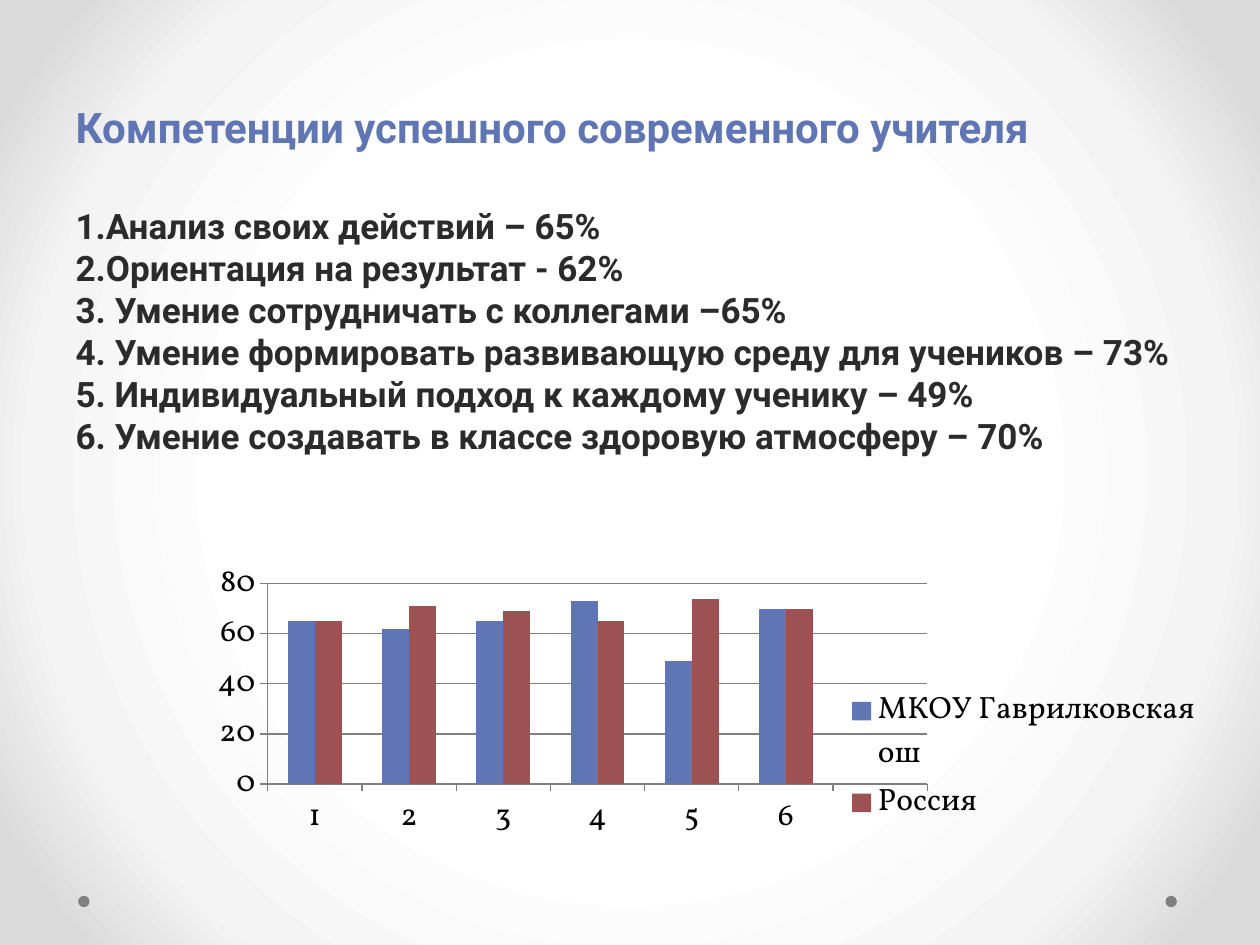
from lxml import etree
from pptx import Presentation
from pptx.chart.data import CategoryChartData
from pptx.dml.color import RGBColor
from pptx.enum import chart as ch, shapes, text
from pptx.oxml import parse_xml
from pptx.oxml.ns import nsdecls, qn
from pptx.util import Inches, Pt

HUES = {"blue": "6076B4", "red": "9C5252", "ink": "2B2B2B",
        "gray": "808080", "black": "000000"}
GLOW = [(50, "FFFFFF"), (76, "F4F4F4"), (92, "DADADA")]
HEAD = "Компетенции успешного современного учителя"
SKILLS = [
    "1.Анализ своих действий – 65%",
    "2.Ориентация на результат - 62%",
    "3. Умение сотрудничать с коллегами –65%",
    "4. Умение формировать развивающую среду для учеников – 73%",
    "5. Индивидуальный подход к каждому ученику – 49%",
    "6. Умение создавать в классе здоровую атмосферу – 70%",
]
CATS = ["1", "2", "3", "4", "5", "6", ""]
SCORES = [
    ("МКОУ Гаврилковская ош", "blue", [65, 62, 65, 73, 49, 70, 0]),
    ("Россия", "red", [65, 71, 69, 65, 74, 70, None]),
]
PLOT = (0.162, 0.039, 0.583, 0.556)
KEY = (0.67, 0.32, 0.32, 0.4)
DOTS = [0.62, 9.25]


def tint(name):
    return RGBColor.from_string(HUES[name])


def write(para, words, size=20, hue="ink", lead=24, after=0):
    para.alignment = text.PP_ALIGN.LEFT
    para.line_spacing = Pt(lead)
    para.space_before = Pt(0)
    para.space_after = Pt(after)
    run = para.add_run()
    run.text = words
    font = run.font
    font.name, font.size, font.bold = "Roboto", Pt(size), True
    font.color.rgb = tint(hue)


def glow(slide):
    stops = "".join(f'<a:gs pos="{p * 1000}"><a:srgbClr val="{c}"/></a:gs>'
                    for p, c in GLOW)
    mid = " ".join(f'{s}="50000"' for s in "ltrb")
    back = parse_xml(
        f'<p:bg {nsdecls("p", "a")}><p:bgPr><a:gradFill rotWithShape="1">'
        f'<a:gsLst>{stops}</a:gsLst><a:path path="circle">'
        f'<a:fillToRect {mid}/></a:path></a:gradFill><a:effectLst/>'
        '</p:bgPr></p:bg>')
    slide.element.cSld.insert(0, back)


def place(node, box, inner=False):
    for old in node.findall(qn("c:layout")):
        node.remove(old)
    lay = etree.Element(qn("c:layout"))
    man = etree.SubElement(lay, qn("c:manualLayout"))
    pairs = [("layoutTarget", "inner")] if inner else []
    pairs += [("xMode", "edge"), ("yMode", "edge"), *zip("xywh", box)]
    for tag, val in pairs:
        etree.SubElement(man, qn(f"c:{tag}")).set("val", str(val))
    node.insert(0 if inner else 1, lay)


def graph(slide):
    data = CategoryChartData()
    data.categories = CATS
    for name, _, vals in SCORES:
        data.add_series(name, vals)
    chart = slide.shapes.add_chart(
        ch.XL_CHART_TYPE.COLUMN_CLUSTERED, Inches(0.67), Inches(4.46),
        Inches(8.98), Inches(2.92), data).chart
    chart.has_title = False
    chart.font.name, chart.font.size = "Vollkorn", Pt(18)
    chart.font.color.rgb = tint("black")
    bars = chart.plots[0]
    bars.gap_width, bars.overlap, bars.vary_by_categories = 150, 0, False
    for bar, (_, hue, _) in zip(bars.series, SCORES):
        bar.format.fill.solid()
        bar.format.fill.fore_color.rgb = tint(hue)
    cat, val = chart.category_axis, chart.value_axis
    val.minimum_scale, val.maximum_scale, val.major_unit = 0, 80, 20
    val.has_major_gridlines = True
    cat.major_tick_mark = val.major_tick_mark = ch.XL_TICK_MARK.OUTSIDE
    for part in (cat, val, val.major_gridlines):
        part.format.line.color.rgb = tint("gray")
        part.format.line.width = Pt(0.75)
    chart.has_legend = True
    chart.legend.position = ch.XL_LEGEND_POSITION.RIGHT
    chart.legend.include_in_layout = False
    area = chart.element.chart
    place(area.plotArea, PLOT, inner=True)
    place(area.find(qn("c:legend")), KEY)


def main():
    deck = Presentation()
    deck.slide_width, deck.slide_height = Inches(10), Inches(7.5)
    slide = deck.slides.add_slide(deck.slide_layouts[5])
    glow(slide)
    for left in DOTS:
        dot = slide.shapes.add_shape(
            shapes.MSO_SHAPE.OVAL, Inches(left), Inches(7.11),
            Inches(0.09), Inches(0.09))
        dot.shadow.inherit = False
        dot.fill.solid()
        dot.fill.fore_color.rgb = tint("gray")
        dot.line.fill.background()
    title = slide.shapes.title
    title.left, title.top = Inches(0.5), Inches(0.3)
    title.width, title.height = Inches(9), Inches(3.37)
    frame = title.text_frame
    frame.word_wrap = True
    frame.auto_size = text.MSO_AUTO_SIZE.NONE
    frame.vertical_anchor = text.MSO_ANCHOR.BOTTOM
    write(frame.paragraphs[0], HEAD, size=24, hue="blue", lead=29, after=30)
    for skill in SKILLS:
        write(frame.add_paragraph(), skill)
    graph(slide)
    deck.save("out.pptx")


if __name__ == "__main__":
    main()
